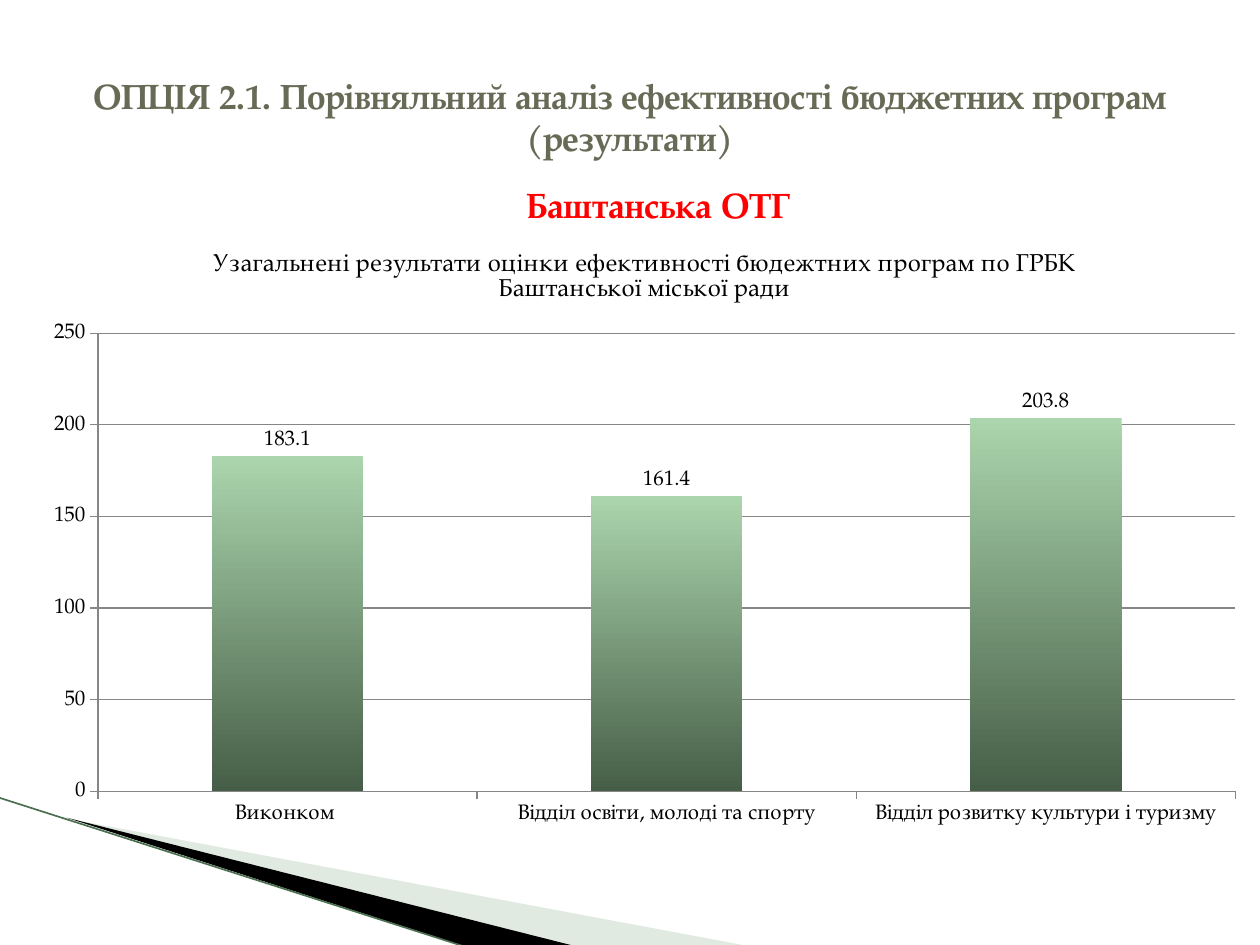
from dataclasses import dataclass

from lxml.etree import SubElement
from pptx import Presentation
from pptx.chart.data import CategoryChartData
from pptx.dml.color import RGBColor
from pptx.enum.chart import XL_CHART_TYPE, XL_LABEL_POSITION, XL_TICK_MARK
from pptx.enum.shapes import MSO_CONNECTOR
from pptx.enum.text import MSO_ANCHOR, MSO_AUTO_SIZE, PP_ALIGN
from pptx.oxml import parse_xml
from pptx.oxml.ns import nsdecls, qn
from pptx.util import Inches, Pt


@dataclass(frozen=True)
class Theme:
    """Colours and type sizes of the slide."""
    font: str = "TeX Gyre Pagella"
    title: str = "676A55"
    accent: str = "FF0000"
    text: str = "000000"
    pale: str = "B3CBB5"
    dark: str = "000000"
    edge: str = "4A7050"
    grid: str = "868686"
    bar_top: str = "ABD5AD"
    bar_bottom: str = "465E47"
    heading_size: int = 20
    chart_title_size: int = 14
    chart_size: int = 12


THEME = Theme()
CHART_TITLE = (
    "Узагальнені результати оцінки ефективності бюдежтних програм "
    "по ГРБК Баштанської міської ради"
)
RESULTS = {
    "Виконком ": 183.1,
    "Відділ освіти, молоді та спорту": 161.4,
    "Відділ розвитку культури і туризму": 203.8,
}


def set_frame(wedge, frame):
    """Give a wedge its frame while its outline stays in place."""
    left, top, width, height = map(Inches, frame)
    for point in wedge._element.iter(qn("a:pt")):
        point.set("x", str(int(point.get("x")) + wedge.left - left))
        point.set("y", str(int(point.get("y")) + wedge.top - top))
    for outline in wedge._element.iter(qn("a:path")):
        outline.set("w", str(width))
        outline.set("h", str(height))
    wedge.left, wedge.top, wedge.width, wedge.height = left, top, width, height


def add_wedge(slide, points, frame, color, opacity=100):
    """Draw a filled corner wedge through points given in inches."""
    corners = [(Inches(x), Inches(y)) for x, y in points]
    builder = slide.shapes.build_freeform(*corners[0])
    builder.add_line_segments(corners[1:])
    wedge = builder.convert_to_shape()
    set_frame(wedge, frame)
    wedge.shadow.inherit = False
    wedge.line.fill.background()
    wedge.fill.solid()
    wedge.fill.fore_color.rgb = RGBColor.from_string(color)
    if opacity < 100:
        color_element = wedge.fill._xPr.find(qn("a:solidFill"))[0]
        SubElement(color_element, qn("a:alpha"), val=str(opacity * 1000))


def add_edge(slide, start, end):
    """Draw the thin line along the corner wedges."""
    edge = slide.shapes.add_connector(
        MSO_CONNECTOR.STRAIGHT, *map(Inches, start + end)
    )
    edge.line.color.rgb = RGBColor.from_string(THEME.edge)
    edge.line.width = Pt(0.95)
    edge._element.spPr.append(parse_xml(f"<a:effectLst {nsdecls('a')}/>"))


def add_heading(slide, text, frame, color, wrap=True):
    """Add a centred bold heading."""
    box = slide.shapes.add_textbox(*map(Inches, frame))
    text_frame = box.text_frame
    text_frame.word_wrap = wrap
    text_frame.auto_size = (
        MSO_AUTO_SIZE.NONE if wrap else MSO_AUTO_SIZE.SHAPE_TO_FIT_TEXT
    )
    text_frame.vertical_anchor = MSO_ANCHOR.MIDDLE if wrap else MSO_ANCHOR.TOP
    para = text_frame.paragraphs[0]
    para.text = text
    para.alignment = PP_ALIGN.CENTER
    style_font(para.font, THEME.heading_size, color, bold=True)


def style_font(font, size, color, bold=False):
    """Apply the slide typeface, a size, a colour and a weight."""
    font.name = THEME.font
    font.size = Pt(size)
    font.bold = bold
    font.color.rgb = RGBColor.from_string(color)


def style_line(line):
    """Make a chart line thin and grey."""
    line.color.rgb = RGBColor.from_string(THEME.grid)
    line.width = Pt(0.75)


def set_plot_layout(chart, **fractions):
    """Place the inner plot area by fractions of the chart."""
    values = "".join(
        f'<c:{key} val="{value}"/>' for key, value in fractions.items()
    )
    layout = parse_xml(
        f'<c:layout {nsdecls("c")}><c:manualLayout>'
        '<c:layoutTarget val="inner"/><c:xMode val="edge"/>'
        f'<c:yMode val="edge"/>{values}</c:manualLayout></c:layout>'
    )
    plot_area = chart._chartSpace.chart.plotArea
    for current in plot_area.findall(qn("c:layout")):
        plot_area.remove(current)
    plot_area.insert(0, layout)


def add_results_chart(slide, frame):
    """Add the column chart of programme scores."""
    data = CategoryChartData(number_format="General")
    data.categories = list(RESULTS)
    data.add_series(CHART_TITLE, list(RESULTS.values()))
    chart = slide.shapes.add_chart(
        XL_CHART_TYPE.COLUMN_CLUSTERED, *map(Inches, frame), data
    ).chart
    style_font(chart.font, THEME.chart_size, THEME.text)
    chart.has_legend = False
    chart.has_title = True
    chart.chart_title.include_in_layout = False
    title = chart.chart_title.text_frame.paragraphs[0]
    title.text = CHART_TITLE
    style_font(title.font, THEME.chart_title_size, THEME.text)

    for axis in (chart.category_axis, chart.value_axis):
        axis.major_tick_mark = XL_TICK_MARK.OUTSIDE
        axis.minor_tick_mark = XL_TICK_MARK.NONE
        style_line(axis.format.line)
    scale = chart.value_axis
    scale.minimum_scale, scale.maximum_scale, scale.major_unit = 0, 250, 50
    scale.has_major_gridlines = True
    style_line(scale.major_gridlines.format.line)

    plot = chart.plots[0]
    plot.vary_by_categories = False
    plot.gap_width = 150
    plot.has_data_labels = True
    plot.data_labels.show_value = True
    plot.data_labels.position = XL_LABEL_POSITION.OUTSIDE_END
    style_font(plot.data_labels.font, THEME.chart_size, THEME.text)
    fill = plot.series[0].format.fill
    fill.gradient()
    fill.gradient_angle = 270
    for stop, color in zip(
        fill.gradient_stops, (THEME.bar_top, THEME.bar_bottom)
    ):
        stop.color.rgb = RGBColor.from_string(color)
    set_plot_layout(chart, x=0.056, y=0.1745, w=0.924, h=0.7515)


def main():
    """Build and save the slide."""
    deck = Presentation()
    deck.slide_width, deck.slide_height = Inches(10), Inches(7.5)
    slide = deck.slides.add_slide(deck.slide_layouts[6])
    add_wedge(
        slide, [(0.55, 6.5), (5.95, 7.51), (4.56, 7.51)],
        (0.78, 5.47, 4.16, 1.58), THEME.pale, opacity=40,
    )
    add_wedge(
        slide, [(0.53, 6.49), (4.57, 7.51), (3.72, 7.52)],
        (-0.06, 6.33, 4.16, 0.92), THEME.dark,
    )
    add_edge(slide, (-0.01, 6.33), (3.71, 7.52))
    add_heading(
        slide,
        "ОПЦІЯ 2.1. Порівняльний аналіз ефективності бюджетних програм "
        "(результати)",
        (0.5, 0.3, 9, 1.25),
        THEME.title,
    )
    add_heading(
        slide, "Баштанська ОТГ", (3.98, 1.41, 2.49, 0.44), THEME.accent, wrap=False
    )
    add_results_chart(slide, (0.23, 1.8, 9.77, 4.84))
    deck.save("out.pptx")


if __name__ == "__main__":
    main()
